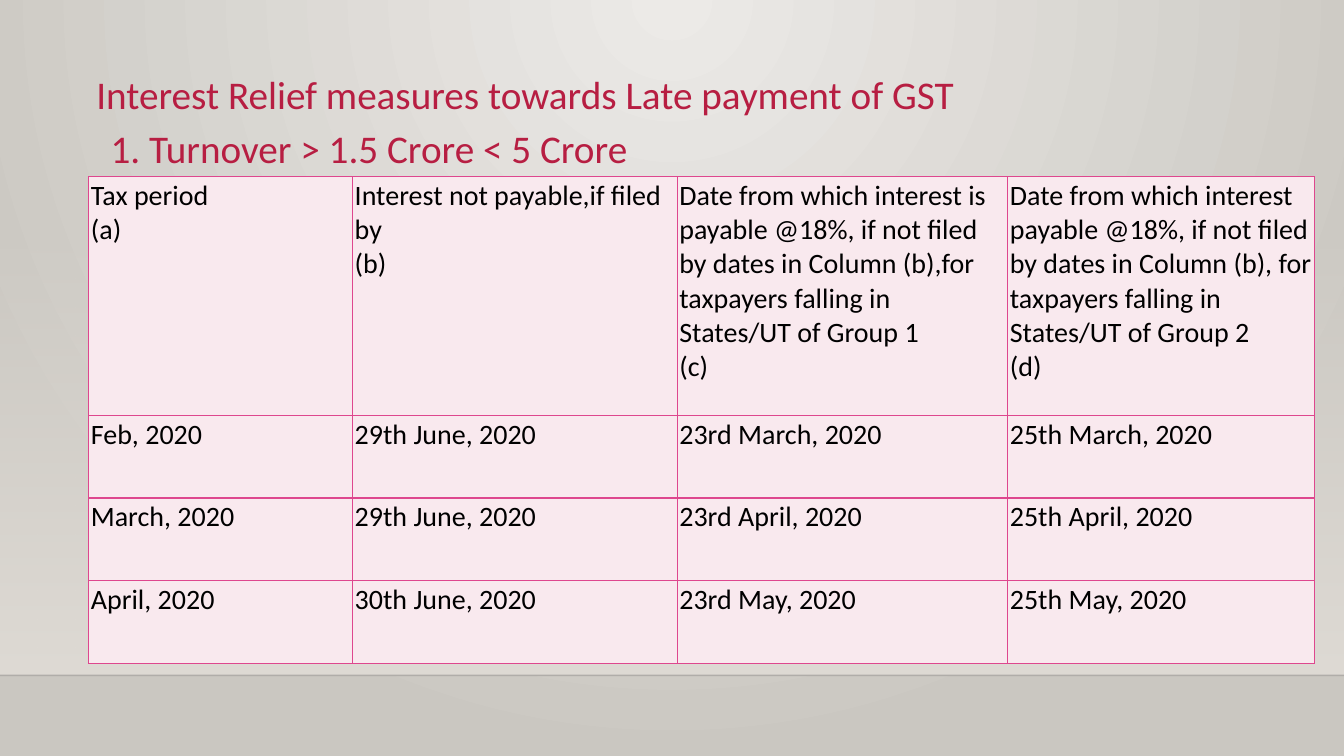
from lxml import etree
from pptx import Presentation
from pptx import util as u
from pptx.dml.color import RGBColor
from pptx.enum import shapes, text
from pptx.oxml import ns

COLORS = {
    "heading": "B71E42", "body": "000000", "cell": "F9E9EE", "border": "DE478E",
    "glow": "ECEAE7", "edge": "CAC7C1", "wall": "DFDBD5", "floor_line": "000001",
}
HEADING = {"name": "Calibri", "size": u.Pt(28)}
BODY = {"name": "Calibri", "size": u.Pt(20)}
SLIDE_WIDTH, SLIDE_HEIGHT = u.Cm(33.87), u.Cm(19.05)
FLOOR = u.Cm(17.02)
COLUMN_WIDTHS = [6.65, 8.18, 8.33, 7.72]
HEADER_HEIGHT, ROW_HEIGHT = 6.02, 2.08
ROWS = [
    ["Tax period\v(a)",
     "Interest not payable,if filed by\v(b)",
     "Date from which interest is payable @18%, if not filed by dates in Column (b),for "
     "taxpayers falling in States/UT of Group 1\v(c)",
     "Date from which interest payable @18%, if not filed by dates in Column (b), for "
     "taxpayers falling in States/UT of Group 2\v(d)"],
    ["Feb, 2020", "29th June, 2020", "23rd March, 2020", "25th March, 2020"],
    ["March, 2020", "29th June, 2020", "23rd April, 2020", "25th April, 2020"],
    ["April, 2020", "30th June, 2020", "23rd May, 2020", "25th May, 2020"],
]


def rgb(name):
    return RGBColor.from_string(COLORS[name])


def add_element(parent, tag, **attributes):
    return etree.SubElement(parent, ns.qn(tag), attributes)


def set_alpha(element, percent):
    """Make the first plain colour inside the element partly transparent."""
    color = next(element.iter(ns.qn("a:srgbClr")))
    add_element(color, "a:alpha", val=str(percent * 1000))


def fill_gradient(fill, names):
    fill.gradient()
    for stop, name in zip(fill.gradient_stops, names):
        stop.color.rgb = rgb(name)


def write(para, words, style, color):
    para.text = words
    for span in para.runs:
        for key, value in style.items():
            setattr(span.font, key, value)
        span.font.color.rgb = rgb(color)


def paint_background(page):
    """Radial gradient centred on the top edge."""
    fill_gradient(page.background.fill, ["glow", "edge"])
    linear = next(page.background._cSld.iter(ns.qn("a:lin")))
    gradient = linear.getparent()
    gradient.remove(linear)
    radial = add_element(gradient, "a:path", path="circle")
    add_element(radial, "a:fillToRect", l="43000", t="0", r="43000", b="100000")


def add_wall(page):
    wall = page.shapes.add_shape(
        shapes.MSO_SHAPE.RECTANGLE, 0, u.Cm(5.61), SLIDE_WIDTH, FLOOR - u.Cm(5.61))
    wall.shadow.inherit = False
    wall.line.fill.background()
    fill_gradient(wall.fill, ["wall", "wall"])
    wall.fill.gradient_angle = 270
    set_alpha(wall._element, 0)


def add_floor_line(page):
    line = page.shapes.add_connector(
        shapes.MSO_CONNECTOR.STRAIGHT, 0, FLOOR, SLIDE_WIDTH, FLOOR)
    line.line.color.rgb = rgb("floor_line")
    line.line.width = u.Pt(1)
    set_alpha(line._element, 20)
    add_element(line._element.spPr, "a:effectLst")


def add_heading(page, words, left, top, width):
    box = page.shapes.add_textbox(u.Cm(left), u.Cm(top), u.Cm(width), u.Cm(1.45))
    box.text_frame.word_wrap = True
    box.text_frame.auto_size = text.MSO_AUTO_SIZE.SHAPE_TO_FIT_TEXT
    write(box.text_frame.paragraphs[0], words, HEADING, "heading")


def add_borders(cell):
    properties = cell._tc.get_or_add_tcPr()
    for index, side in enumerate(["a:lnL", "a:lnR", "a:lnT", "a:lnB"]):
        border = add_element(properties, side, w=str(u.Pt(1)))
        add_element(add_element(border, "a:solidFill"), "a:srgbClr", val=COLORS["border"])
        properties.insert(index, border)


def fill_cell(cell, words):
    for side in ["left", "right", "top", "bottom"]:
        setattr(cell, f"margin_{side}", u.Cm(0.05))
    cell.fill.solid()
    cell.fill.fore_color.rgb = rgb("cell")
    add_borders(cell)
    write(cell.text_frame.paragraphs[0], words, BODY, "body")


def add_dates_table(page):
    heights = [HEADER_HEIGHT] + [ROW_HEIGHT] * (len(ROWS) - 1)
    table = page.shapes.add_table(
        len(ROWS), len(COLUMN_WIDTHS), u.Cm(2.24), u.Cm(4.45),
        u.Cm(sum(COLUMN_WIDTHS)), u.Cm(sum(heights))).table
    for column, width in zip(table.columns, COLUMN_WIDTHS):
        column.width = u.Cm(width)
    for row, height, entries in zip(table.rows, heights, ROWS):
        row.height = u.Cm(height)
        for cell, words in zip(row.cells, entries):
            fill_cell(cell, words)


def main():
    deck = Presentation()
    deck.slide_width, deck.slide_height = SLIDE_WIDTH, SLIDE_HEIGHT
    page = deck.slides.add_slide(deck.slide_layouts[6])
    paint_background(page)
    add_wall(page)
    add_floor_line(page)
    add_heading(page, "Interest Relief measures towards Late payment of GST", 2.18, 1.65, 25.32)
    add_heading(page, "1. Turnover > 1.5 Crore < 5 Crore", 2.54, 3, 15.47)
    add_dates_table(page)
    deck.save("out.pptx")


if __name__ == "__main__":
    main()
